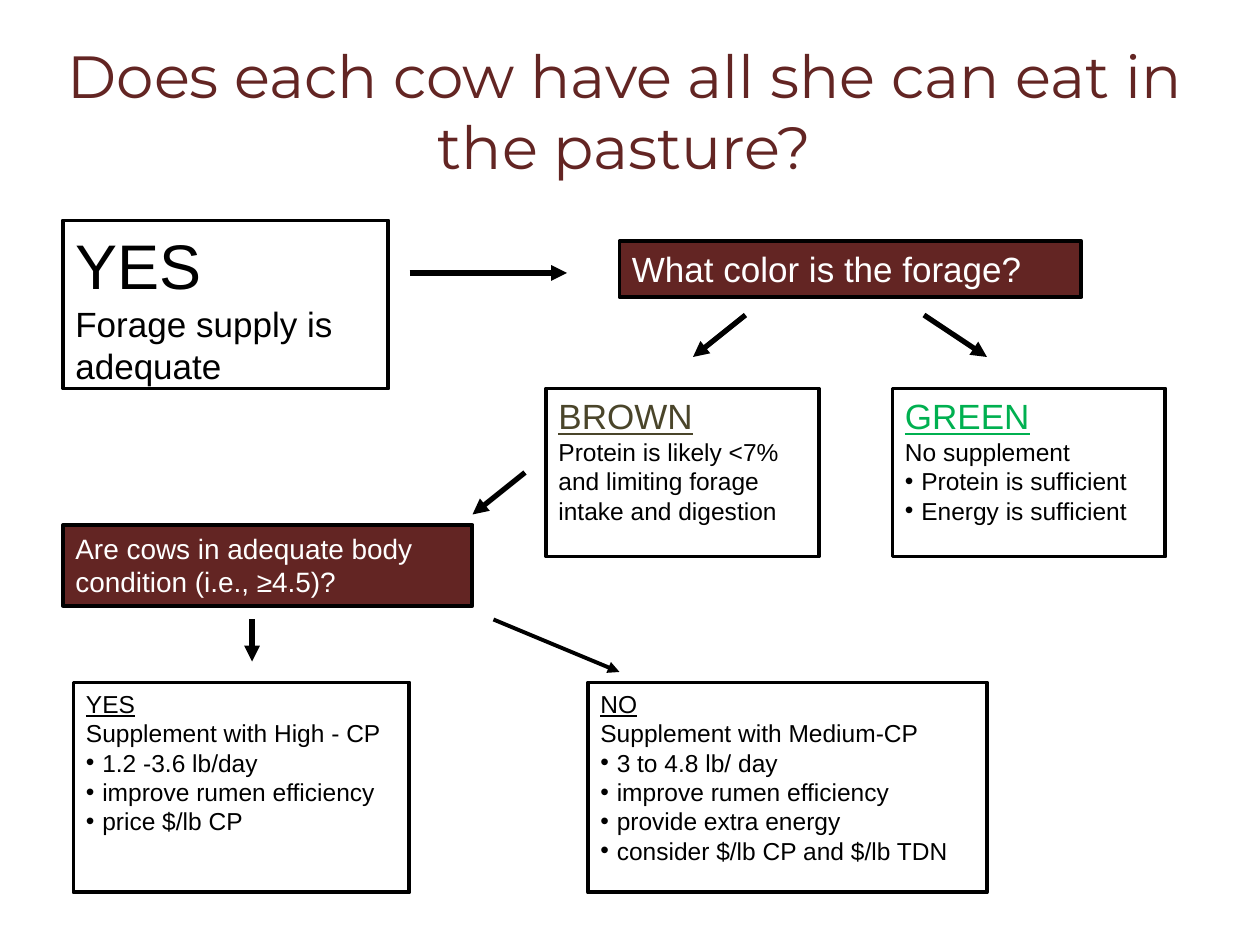
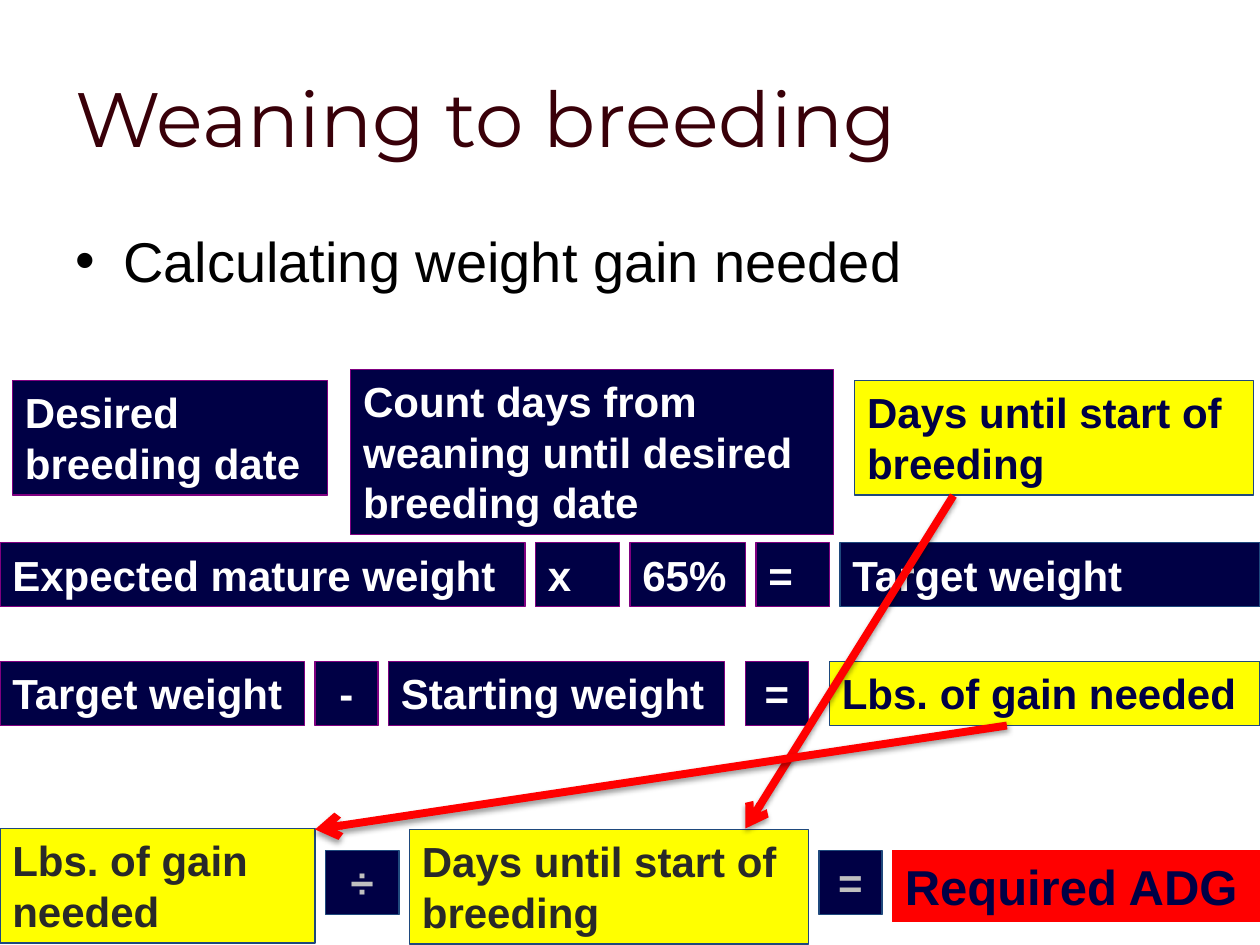
from lxml.etree import SubElement
from pptx import Presentation
from pptx.dml.color import RGBColor
from pptx.enum.shapes import MSO_CONNECTOR, MSO_SHAPE
from pptx.enum.text import MSO_ANCHOR, PP_ALIGN
from pptx.oxml.ns import qn
from pptx.util import Inches, Pt

COLORS = {
    "black": "000000", "white": "FFFFFF", "maroon": "632523", "wine": "390009",
    "green": "00B050", "brown": "4A452A", "navy": "000045", "purple": "800080",
    "blue": "1F497D", "yellow": "FFFF00", "red": "FF0000", "charcoal": "292929",
    "silver": "BFBFBF",
}
COLUMNS, ROWS = 120, 90
WIDTH, HEIGHT = Inches(10), Inches(7.5)
BODY_FONT, TITLE_FONT = "Arial", "Montserrat"
ONE_LINE, TWO_LINES, THREE_LINES = 6.1, 10.9, 15.7


def color(name):
    return RGBColor.from_string(COLORS[name])


def across(columns):
    return round(WIDTH * columns / COLUMNS)


def down(rows):
    return round(HEIGHT * rows / ROWS)


def place(left, top, width, height):
    return across(left), down(top), across(width), down(height)


def add_paragraph(frame, text, size, ink, font=BODY_FONT, bold=False,
                  underline=False, align=PP_ALIGN.LEFT, indent=0, bullet=False):
    first = frame.paragraphs[0]
    para = frame.add_paragraph() if first.runs else first
    para.alignment = align
    properties = para._p.get_or_add_pPr()
    if indent:
        properties.set("marL", str(Inches(indent)))
        properties.set("indent", str(-Inches(indent)))
    if bullet:
        SubElement(properties, qn("a:buFont"), typeface=BODY_FONT)
        SubElement(properties, qn("a:buChar"), char="•")
    span = para.add_run()
    span.text = text
    span.font.name = font
    span.font.size = Pt(size)
    span.font.bold = bold
    span.font.underline = underline
    span.font.color.rgb = color(ink)


def add_text(page, area, text, size, ink, anchor=MSO_ANCHOR.TOP, **style):
    frame = page.shapes.add_textbox(*place(*area)).text_frame
    frame.word_wrap = True
    frame.vertical_anchor = anchor
    add_paragraph(frame, text, size, ink, **style)


def add_title(page, area, text, size, ink, align=PP_ALIGN.LEFT):
    add_text(page, area, text, size, ink, MSO_ANCHOR.MIDDLE, font=TITLE_FONT, align=align)


def add_box(page, area, fill, line, weight):
    box = page.shapes.add_shape(MSO_SHAPE.RECTANGLE, *place(*area))
    box.shadow.inherit = False
    box.fill.solid()
    box.fill.fore_color.rgb = color(fill)
    box.line.color.rgb = color(line)
    box.line.width = Pt(weight)
    box.text_frame.word_wrap = True
    box.text_frame.vertical_anchor = MSO_ANCHOR.TOP
    return box.text_frame


def add_arrow(page, start, end, ink="black", weight=3, head="triangle", shadow=False):
    arrow = page.shapes.add_connector(
        MSO_CONNECTOR.STRAIGHT,
        across(start[0]), down(start[1]), across(end[0]), down(end[1]))
    arrow.line.color.rgb = color(ink)
    arrow.line.width = Pt(weight)
    SubElement(arrow.line._get_or_add_ln(), qn("a:tailEnd"), type=head)
    effects = SubElement(arrow._element.spPr, qn("a:effectLst"))
    if shadow:
        outer = SubElement(effects, qn("a:outerShdw"), blurRad=str(Pt(3.1)),
                           dist=str(Pt(1.6)), dir="5400000", rotWithShape="0")
        tint = SubElement(outer, qn("a:srgbClr"), val=COLORS["black"])
        SubElement(tint, qn("a:alpha"), val="38000")


def add_question(page, area, text, size):
    frame = add_box(page, area, "maroon", "black", 2.25)
    add_paragraph(frame, text, size, "white")


def add_answer(page, area, heading, detail, bullets=(), size=14, ink="black",
               detail_size=14, underline=True):
    frame = add_box(page, area, "white", "black", 2.25)
    indent = 0.13 if bullets else 0
    add_paragraph(frame, heading, size, ink, underline=underline, indent=indent)
    add_paragraph(frame, detail, detail_size, "black", indent=indent)
    for item in bullets:
        add_paragraph(frame, item, 14, "black", indent=indent, bullet=True)


def add_term(page, area, text, fill="navy", line="purple", ink="white", size=24,
             align=PP_ALIGN.LEFT):
    frame = add_box(page, area, fill, line, 0.75)
    add_paragraph(frame, text, size, ink, bold=True, align=align)


def build_forage_page(page):
    add_title(page, (3, 3, 113, 15), "Does each cow have all she can eat in the pasture?",
              34, "maroon", PP_ALIGN.CENTER)
    add_answer(page, (6, 21, 31, 16), "YES", "Forage supply is adequate",
               size=36, detail_size=20, underline=False)
    add_question(page, (59, 23, 44, 5.3), "What color is the forage?", 20)
    add_answer(page, (52, 37, 26, 16), "BROWN",
               "Protein is likely <7% and limiting forage intake and digestion",
               size=20, ink="brown")
    add_answer(page, (85, 37, 26, 16), "GREEN", "No supplement",
               ("Protein is sufficient", "Energy is sufficient"), size=20, ink="green")
    add_question(page, (6, 50, 39, 7.7),
                 "Are cows in adequate body condition (i.e., ≥4.5)?", 16)
    add_answer(page, (7, 65, 32, 20), "YES", "Supplement with High - CP",
               ("1.2 -3.6 lb/day", "improve rumen efficiency", "price $/lb CP"))
    add_answer(page, (56, 65, 38, 20), "NO", "Supplement with Medium-CP",
               ("3 to 4.8 lb/ day", "improve rumen efficiency",
                "provide extra energy", "consider $/lb CP and $/lb TDN"))
    for start, end in (((39, 26), (54, 26)), ((88, 30), (94, 34)), ((71, 30), (66, 34)),
                       ((50, 45), (45, 49)), ((24, 59), (24, 63))):
        add_arrow(page, start, end)
    add_arrow(page, (47, 59), (59, 64), weight=2.25)


def build_breeding_page(page):
    add_text(page, (6, 21, 108, 59.4), "Calculating weight gain needed", 32, "black",
             indent=0.38, bullet=True)
    add_title(page, (6, 3.6, 108, 15), "Weaning to breeding", 44, "wine")

    result = {"fill": "yellow", "line": "blue", "ink": "navy"}
    carried = {**result, "ink": "charcoal"}
    centered = {"align": PP_ALIGN.CENTER}
    operator = {**centered, "line": "blue", "ink": "silver"}

    add_term(page, (1.2, 36.25, 30, TWO_LINES), "Desired breeding date")
    add_term(page, (33.4, 35.2, 46, THREE_LINES),
             "Count days from weaning until desired breeding date")
    add_term(page, (81.4, 36.25, 38, TWO_LINES), "Days until start of breeding", **result)

    equations = (
        (51.7, ((0, 50, "Expected mature weight", {}), (51, 8, "x", {}),
                (60, 11, "65%", {}), (72, 7, "=", {}),
                (80, 40, "Target weight", {"line": "blue"}))),
        (63, ((0, 29, "Target weight", {}), (30, 6, "-", centered),
              (37, 32, "Starting weight", {}), (71, 6, "=", centered),
              (79, 41, "Lbs. of gain needed", result))),
        (81, ((31, 7, "÷", operator), (78, 6, "=", operator))),
    )
    for top, terms in equations:
        for left, width, text, style in terms:
            add_term(page, (left, top, width, ONE_LINE), text, **style)

    add_term(page, (0, 78.9, 30, TWO_LINES), "Lbs. of gain needed", **carried)
    add_term(page, (39, 79, 38, TWO_LINES), "Days until start of breeding", **carried)
    add_term(page, (85, 81, 35, 6.8), "Required ADG", "red", "red", "navy", 28)
    for start, end in (((90.8, 47.2), (71, 78.9)), ((95.9, 69.1), (30, 79))):
        add_arrow(page, start, end, "red", 4.5, "arrow", shadow=True)


def main():
    deck = Presentation()
    deck.slide_width, deck.slide_height = WIDTH, HEIGHT
    for build in (build_forage_page, build_breeding_page):
        build(deck.slides.add_slide(deck.slide_layouts[6]))
    deck.save("out.pptx")


if __name__ == "__main__":
    main()
